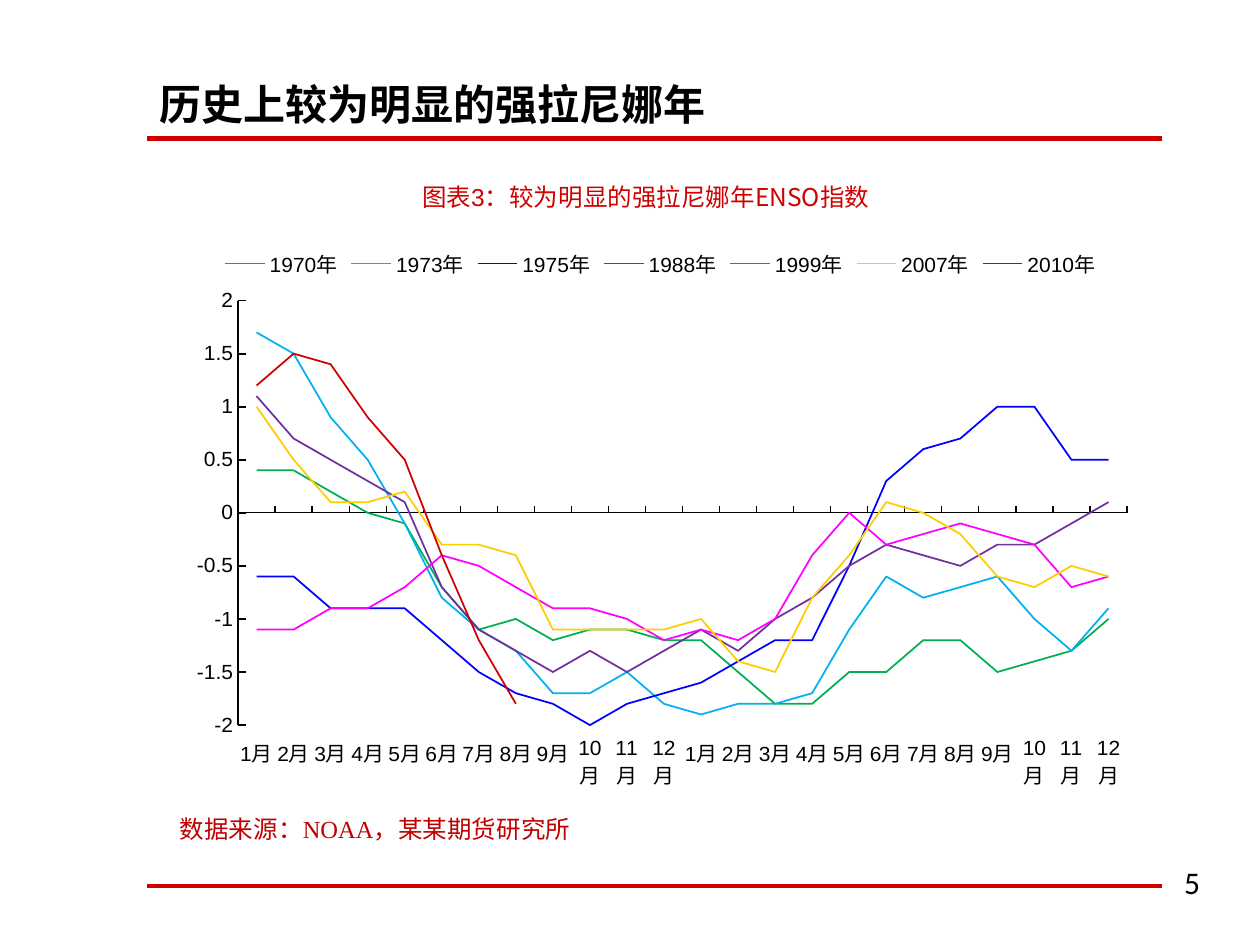
from dataclasses import dataclass

from lxml import etree
from pptx import Presentation
from pptx.chart.data import CategoryChartData
from pptx.dml.color import RGBColor
from pptx.enum.chart import XL_CHART_TYPE, XL_LEGEND_POSITION, XL_MARKER_STYLE, XL_TICK_LABEL_POSITION, XL_TICK_MARK
from pptx.enum.shapes import MSO_CONNECTOR
from pptx.enum.text import MSO_ANCHOR, PP_ALIGN
from pptx.oxml.ns import qn
from pptx.util import Inches, Pt

LINE_CHART = XL_CHART_TYPE.LINE
LEGEND_TOP = XL_LEGEND_POSITION.TOP
NO_MARKER = XL_MARKER_STYLE.NONE
LABELS_LOW = XL_TICK_LABEL_POSITION.LOW
TICK_IN, TICK_NONE = XL_TICK_MARK.INSIDE, XL_TICK_MARK.NONE
STRAIGHT = MSO_CONNECTOR.STRAIGHT
MIDDLE = MSO_ANCHOR.MIDDLE
LEFT, CENTER = PP_ALIGN.LEFT, PP_ALIGN.CENTER


@dataclass(frozen=True)
class Theme:
    black: str = "000000"
    red: str = "D00000"
    source_red: str = "C00000"
    heading: str = "Calibri"
    cjk: str = "Noto Sans CJK SC"
    sans: str = "Arial"
    serif: str = "Times New Roman"
    title_size: int = 24
    number_size: int = 18
    caption_size: int = 14
    chart_size: int = 12


T = Theme()

# text box: left, top, width, height, size, colour, bold, alignment, wrap, runs
TEXTS = [
    (9.3, 6.8, 0.5, 0.4, T.number_size, T.black, False, LEFT, False, [("5", T.heading)]),
    (1.17, 0.55, 5.55, 0.55, T.title_size, T.black, True, LEFT, True,
     [("历史上较为明显的强拉尼娜年", T.heading)]),
    (1.14, 1.39, 7.97, 0.34, T.caption_size, T.red, False, CENTER, True,
     [("图表", T.cjk), ("3", T.sans), ("：较为明显的强拉尼娜年ENSO指数", T.cjk)]),
    (1.33, 6.41, 3.83, 0.34, T.caption_size, T.source_red, False, LEFT, True,
     [("数据来源：", T.cjk), ("NOAA", T.serif), ("，某某期货研究所", T.cjk)]),
]
RULE_LEFT, RULE_RIGHT = 1.17, 9.22
RULE_TOPS = [1.1, 7.03]

MONTHS = [f"{m}月" for m in range(1, 13)] * 2
CHART_BOX = (1.38, 1.86, 7.72, 4.41)
PLOT_AREA = {"x": 0.066, "y": 0.122, "w": 0.914, "h": 0.781}
ENSO = [
    ("1970年", "00B050", [0.4, 0.4, 0.2, 0, -0.1, -0.7, -1.1, -1, -1.2, -1.1, -1.1, -1.2,
                         -1.2, -1.5, -1.8, -1.8, -1.5, -1.5, -1.2, -1.2, -1.5, -1.4, -1.3, -1]),
    ("1973年", "00B0F0", [1.7, 1.5, 0.9, 0.5, -0.1, -0.8, -1.1, -1.3, -1.7, -1.7, -1.5, -1.8,
                         -1.9, -1.8, -1.8, -1.7, -1.1, -0.6, -0.8, -0.7, -0.6, -1, -1.3, -0.9]),
    ("1975年", "0000FF", [-0.6, -0.6, -0.9, -0.9, -0.9, -1.2, -1.5, -1.7, -1.8, -2, -1.8, -1.7,
                         -1.6, -1.4, -1.2, -1.2, -0.5, 0.3, 0.6, 0.7, 1, 1, 0.5, 0.5]),
    ("1988年", "7030A0", [1.1, 0.7, 0.5, 0.3, 0.1, -0.7, -1.1, -1.3, -1.5, -1.3, -1.5, -1.3,
                         -1.1, -1.3, -1, -0.8, -0.5, -0.3, -0.4, -0.5, -0.3, -0.3, -0.1, 0.1]),
    ("1999年", "FF00FF", [-1.1, -1.1, -0.9, -0.9, -0.7, -0.4, -0.5, -0.7, -0.9, -0.9, -1, -1.2,
                         -1.1, -1.2, -1, -0.4, 0, -0.3, -0.2, -0.1, -0.2, -0.3, -0.7, -0.6]),
    ("2007年", "FFCC00", [1, 0.5, 0.1, 0.1, 0.2, -0.3, -0.3, -0.4, -1.1, -1.1, -1.1, -1.1,
                         -1, -1.4, -1.5, -0.8, -0.4, 0.1, 0, -0.2, -0.6, -0.7, -0.5, -0.6]),
    ("2010年", T.red, [1.2, 1.5, 1.4, 0.9, 0.5, -0.4, -1.2, -1.8] + [None] * 16),
]


def style_line(line, color, width):
    line.color.rgb = RGBColor.from_string(color)
    line.width = Pt(width)


def add_rule(s, top):
    rule = s.shapes.add_connector(STRAIGHT, Inches(RULE_LEFT), Inches(top), Inches(RULE_RIGHT), Inches(top))
    style_line(rule.line, T.red, 2.5)
    etree.SubElement(rule._element.spPr, qn("a:effectLst"))


def add_text(s, left, top, width, height, size, color, bold, align, wrap, runs):
    sp = s.shapes.add_textbox(Inches(left), Inches(top), Inches(width), Inches(height))
    tf = sp.text_frame
    tf.word_wrap = wrap
    tf.vertical_anchor = MIDDLE
    p = tf.paragraphs[0]
    p.alignment = align
    p.font.size = Pt(size)
    p.font.bold = bold
    p.font.color.rgb = RGBColor.from_string(color)
    for text, font in runs:
        r = p.add_run()
        r.text = text
        r.font.name = font
        east_asian = etree.SubElement(r._r.get_or_add_rPr(), qn("a:ea"))
        east_asian.set("typeface", T.cjk)


def fix_plot_area(chart):
    """Pin the inner plot area to PLOT_AREA, as fractions of the chart."""
    plot_area = chart._chartSpace.chart.plotArea
    for old in plot_area.findall(qn("c:layout")):
        plot_area.remove(old)
    layout = etree.Element(qn("c:layout"))
    manual = etree.SubElement(layout, qn("c:manualLayout"))
    settings = [("layoutTarget", "inner"), ("xMode", "edge"), ("yMode", "edge"), *PLOT_AREA.items()]
    for tag, value in settings:
        etree.SubElement(manual, qn(f"c:{tag}")).set("val", str(value))
    plot_area.insert(0, layout)


def add_enso_chart(s):
    data = CategoryChartData(number_format="General")
    data.categories = MONTHS
    for name, _, values in ENSO:
        data.add_series(name, values)
    chart = s.shapes.add_chart(LINE_CHART, *map(Inches, CHART_BOX), data).chart
    chart.has_title = False
    chart.font.name = T.sans
    chart.font.size = Pt(T.chart_size)
    chart.font.color.rgb = RGBColor.from_string(T.black)
    chart.has_legend = True
    chart.legend.position = LEGEND_TOP
    chart.legend.include_in_layout = False
    chart.plots[0].vary_by_categories = False
    for series, (_, color, _) in zip(chart.plots[0].series, ENSO):
        series.smooth = False
        series.marker.style = NO_MARKER
        style_line(series.format.line, color, 1)

    months, index = chart.category_axis, chart.value_axis
    for axis, width in ((months, 0.75), (index, 1)):
        axis.has_major_gridlines = False
        axis.major_tick_mark = TICK_IN
        axis.minor_tick_mark = TICK_NONE
        style_line(axis.format.line, T.black, width)
    months.tick_label_position = LABELS_LOW
    index.minimum_scale, index.maximum_scale, index.major_unit = -2, 2, 0.5
    index.tick_labels.number_format = "General"
    index.tick_labels.number_format_is_linked = False
    fix_plot_area(chart)


def main():
    prs = Presentation()
    prs.slide_width, prs.slide_height = Inches(10), Inches(7.5)
    s = prs.slides.add_slide(prs.slide_layouts[6])
    for top in RULE_TOPS:
        add_rule(s, top)
    add_enso_chart(s)
    for text in TEXTS:
        add_text(s, *text)
    prs.save("out.pptx")


if __name__ == "__main__":
    main()
